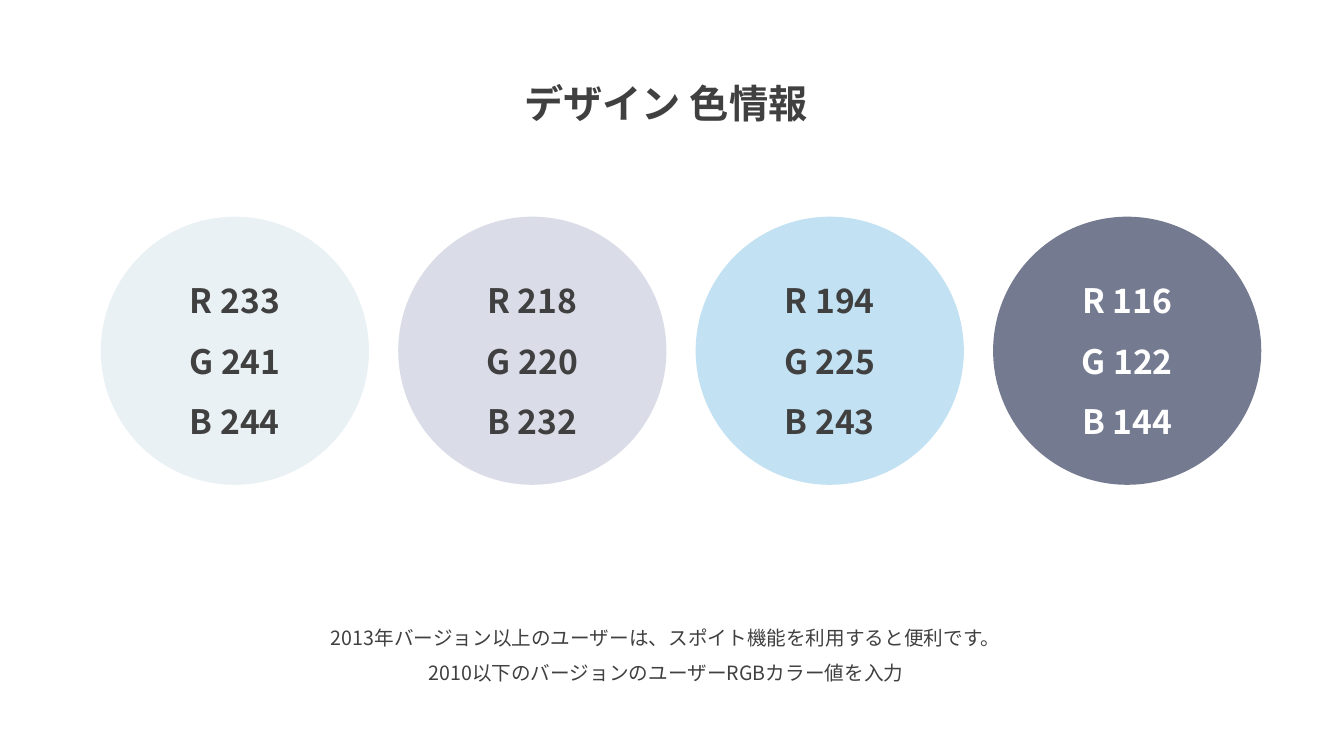
from lxml import etree
from pptx import Presentation
from pptx import util as u
from pptx.dml import color
from pptx.enum import shapes, text
from pptx.oxml import ns

FONT = "Noto Sans CJK KR"
DARK = "404040"
WHITE = "FFFFFF"
SWATCHES = [
    ((233, 241, 244), DARK),
    ((218, 220, 232), DARK),
    ((194, 225, 243), DARK),
    ((116, 122, 144), WHITE),
]
NOTES = [
    "2013年バージョン以上のユーザーは、スポイト機能を利用すると便利です。",
    "2010以下のバージョンのユーザーRGBカラー値を入力",
]


def paint(hex_color):
    return color.RGBColor.from_string(hex_color)


class ColorPage:
    def __init__(self, page, font, line_spacing):
        self.page = page
        self.font = font
        self.line_spacing = line_spacing

    def set_text(self, frame, lines, size, hex_color, bold):
        frame.word_wrap = True
        frame.text = "\n".join(lines)
        for para in frame.paragraphs:
            para.alignment = text.PP_ALIGN.CENTER
            para.line_spacing = self.line_spacing
            for span in para.runs:
                span.font.size = u.Pt(size)
                span.font.bold = bold
                span.font.color.rgb = paint(hex_color)
                span.font.name = self.font
                properties = span._r.get_or_add_rPr()
                etree.SubElement(properties, ns.qn("a:ea"), typeface=self.font)

    def label(self, left, top, width, height, lines, size, bold=False):
        box = self.page.shapes.add_textbox(*map(u.Inches, (left, top, width, height)))
        self.set_text(box.text_frame, lines, size, DARK, bold)
        box.text_frame.auto_size = text.MSO_AUTO_SIZE.SHAPE_TO_FIT_TEXT

    def swatch(self, left, top, diameter, rgb, text_color):
        circle = self.page.shapes.add_shape(
            shapes.MSO_SHAPE.OVAL, *map(u.Inches, (left, top, diameter, diameter))
        )
        circle.shadow.inherit = False
        circle.fill.solid()
        circle.fill.fore_color.rgb = paint("".join(f"{value:02X}" for value in rgb))
        circle.line.fill.background()
        circle.text_frame.vertical_anchor = text.MSO_ANCHOR.MIDDLE
        lines = [f"{channel} {value}" for channel, value in zip("RGB", rgb)]
        self.set_text(circle.text_frame, lines, 24, text_color, True)


def main():
    deck = Presentation()
    deck.slide_width = u.Inches(13.33)
    deck.slide_height = u.Inches(7.5)
    page = ColorPage(deck.slides.add_slide(deck.slide_layouts[6]), FONT, 1.5)

    for index, (rgb, text_color) in enumerate(SWATCHES):
        page.swatch(1 + index * 2.95, 2.15, 2.66, rgb, text_color)
    page.label(4.29, 0.5, 4.63, 0.74, ["デザイン 色情報"], 28, bold=True)
    page.label(2.61, 6.04, 7.99, 0.77, NOTES, 14)

    deck.save("out.pptx")


if __name__ == "__main__":
    main()
